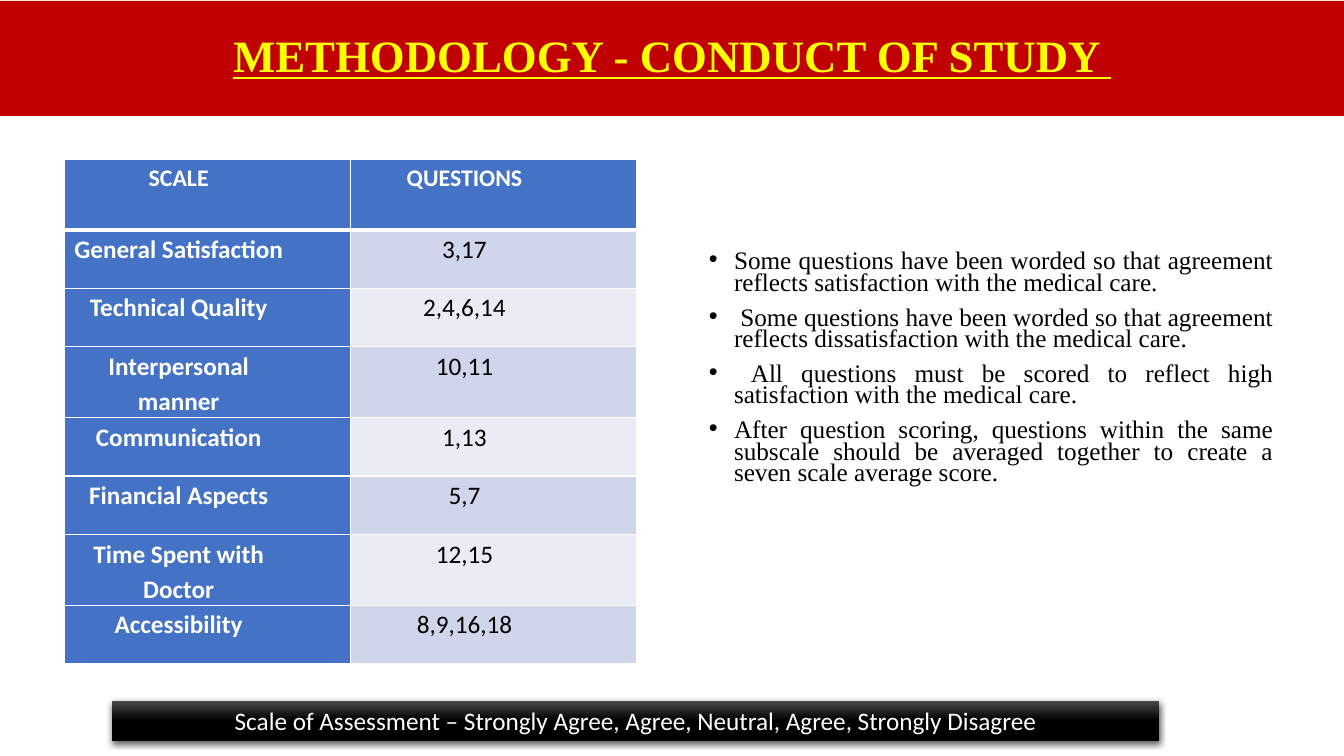
from lxml import etree
from pptx import Presentation
from pptx.dml.color import RGBColor
from pptx.enum.shapes import MSO_SHAPE as SHAPE
from pptx.enum.text import MSO_ANCHOR as ANCHOR, MSO_AUTO_SIZE as AUTO, PP_ALIGN as ALIGN
from pptx.oxml import parse_xml
from pptx.oxml.ns import nsdecls, qn
from pptx.util import Inches, Pt

SERIF, SANS = "Times New Roman", "Calibri"
BLUE, WHITE, BLACK = "4472C4", "FFFFFF", "000000"
BANDS = ["CFD5EA", "E9EBF5"]

SCALES = [
    ("SCALE", "QUESTIONS"),
    ("General Satisfaction", "3,17"),
    ("Technical Quality", "2,4,6,14"),
    ("Interpersonal manner", "10,11"),
    ("Communication", "1,13"),
    ("Financial Aspects", "5,7"),
    ("Time Spent with Doctor", "12,15"),
    ("Accessibility", "8,9,16,18"),
]
POINTS = [
    "Some questions have been worded so that agreement reflects satisfaction with the medical care.",
    " Some questions have been worded so that agreement reflects dissatisfaction with the medical care.",
    " All questions must be scored to reflect high satisfaction with the medical care.",
    "After question scoring, questions within the same subscale should be averaged together "
    "to create a seven scale average score.",
]


def rgb(color):
    return RGBColor.from_string(color)


def place(shape, left, top, width, height):
    shape.left, shape.top = Inches(left), Inches(top)
    shape.width, shape.height = Inches(width), Inches(height)


def write(p, text, size=18, font=SANS, color=BLACK, bold=False, underline=False,
          align=ALIGN.CENTER, spacing=1.0, before=0):
    p.alignment, p.line_spacing, p.space_before = align, spacing, Pt(before)
    r = p.add_run()
    r.text = text
    f = r.font
    f.size, f.name, f.bold, f.underline = Pt(size), font, bold, underline
    f.color.rgb = rgb(color)


def set_bullet(p):
    pPr = p._p.get_or_add_pPr()
    pPr.set("marL", str(Inches(0.25)))
    pPr.set("indent", str(-Inches(0.25)))
    etree.SubElement(pPr, qn("a:buFont")).set("typeface", "Arial")
    etree.SubElement(pPr, qn("a:buChar")).set("char", "•")


def set_borders(cell, **widths):
    tcPr = cell._tc.get_or_add_tcPr()
    for i, side in enumerate("LRTB"):
        tcPr.insert(i, parse_xml(
            f'<a:ln{side} {nsdecls("a")} w="{Pt(widths.get(side, 1))}"><a:solidFill>'
            f'<a:srgbClr val="{WHITE}"/></a:solidFill></a:ln{side}>'))


def add_title(s):
    title = s.shapes.title
    place(title, 0, 0.01, 13.33, 1.14)
    title.fill.solid()
    title.fill.fore_color.rgb = rgb("C00000")
    tf = title.text_frame
    tf.auto_size, tf.vertical_anchor = AUTO.NONE, ANCHOR.MIDDLE
    write(tf.paragraphs[0], "METHODOLOGY - CONDUCT OF STUDY ", size=32, font=SERIF,
          color="FFFF00", bold=True, underline=True, spacing=0.9)


def add_points(s):
    body = s.placeholders[1]
    place(body, 6.93, 1.7, 5.8, 4.96)
    tf = body.text_frame
    tf.auto_size, tf.vertical_anchor = AUTO.NONE, ANCHOR.TOP
    tf.margin_top = Inches(0.81)
    for i, text in enumerate(POINTS):
        p = tf.add_paragraph() if i else tf.paragraphs[0]
        write(p, text, font=SERIF, align=ALIGN.JUSTIFY, spacing=0.7, before=10)
        set_bullet(p)


def add_scale_table(s):
    table = s.shapes.add_table(len(SCALES), 2, Inches(0.64), Inches(1.58),
                               Inches(5.67), Inches(4.76)).table
    for i, row in enumerate(SCALES):
        table.rows[i].height = Inches(0.58 if i else 0.7)
        for j, text in enumerate(row):
            cell = table.cell(i, j)
            label = i == 0 or j == 0
            cell.fill.solid()
            cell.fill.fore_color.rgb = rgb(BLUE if label else BANDS[(i - 1) % 2])
            # Wide right margin sets the text left of the cell's middle
            cell.margin_left, cell.margin_right = Inches(0.06), Inches(0.63)
            cell.margin_top = cell.margin_bottom = 0
            set_borders(cell, T=3 if i == 1 else 1, B=3 if i == 0 else 1)
            write(cell.text_frame.paragraphs[0], text, size=18 if i else 17,
                  color=WHITE if label else BLACK, bold=label, spacing=1.15, before=0.1)


def add_assessment_bar(s):
    bar = s.shapes.add_shape(SHAPE.RECTANGLE, Inches(1.11), Inches(6.95),
                             Inches(10.39), Inches(0.4))
    bar.line.fill.background()
    bar.fill.gradient()
    bar.fill.gradient_angle = 270
    start, end = bar.fill.gradient_stops
    start.color.rgb, end.color.rgb = rgb("4B4B4B"), rgb(BLACK)
    end.position = 0.5
    # Soft shadow straight below
    bar._element.spPr.append(parse_xml(
        f'<a:effectLst {nsdecls("a")}><a:outerShdw blurRad="{Pt(4.5)}" dist="{Pt(1.5)}" '
        f'dir="5400000" algn="ctr" rotWithShape="0"><a:srgbClr val="{BLACK}">'
        '<a:alpha val="63000"/></a:srgbClr></a:outerShdw></a:effectLst>'))
    tf = bar.text_frame
    tf.word_wrap, tf.vertical_anchor = True, ANCHOR.TOP
    write(tf.paragraphs[0], "Scale of Assessment – Strongly Agree, Agree, Neutral, "
          "Agree, Strongly Disagree", color=WHITE)


def main():
    prs = Presentation()
    prs.slide_width, prs.slide_height = Inches(13.33), Inches(7.5)
    s = prs.slides.add_slide(prs.slide_layouts[1])
    add_title(s)
    add_points(s)
    add_scale_table(s)
    add_assessment_bar(s)
    prs.save("out.pptx")


if __name__ == "__main__":
    main()
